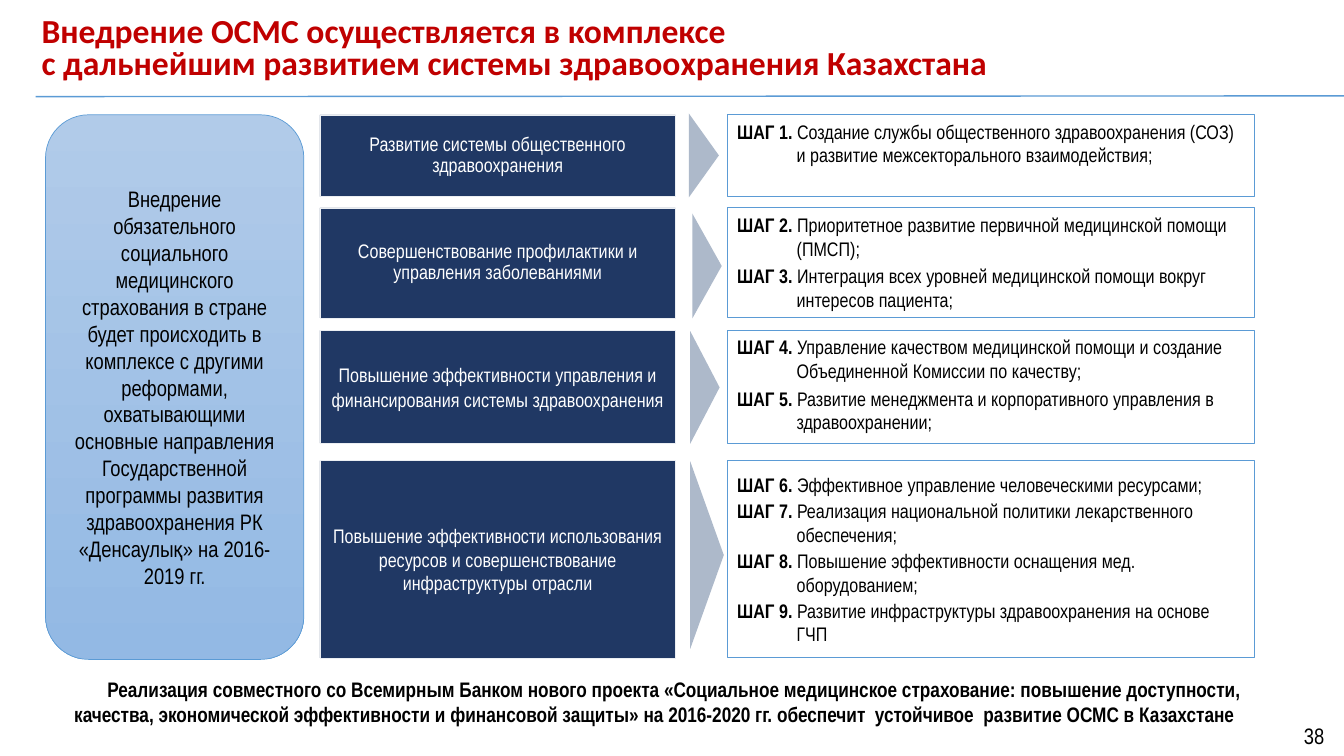
from pptx import Presentation
from pptx.dml.color import RGBColor
from pptx.enum.shapes import MSO_CONNECTOR, MSO_SHAPE as Preset
from pptx.enum.text import MSO_ANCHOR as Anchor, MSO_AUTO_SIZE as AutoSize, PP_ALIGN as Align
from pptx.oxml.ns import qn
from pptx.util import Pt
from lxml import etree

RED = RGBColor(0xC0, 0x00, 0x00)
NAVY = RGBColor(0x20, 0x38, 0x64)
PALE = RGBColor(0xEB, 0xEE, 0xF2)
BLUE = RGBColor(0x5B, 0x9B, 0xD5)
GREY = RGBColor(0xAD, 0xB9, 0xCA)
PANEL_TOP = RGBColor(0xB1, 0xCB, 0xE9)
PANEL_BOTTOM = RGBColor(0x93, 0xB9, 0xE4)
WHITE = RGBColor(0xFF, 0xFF, 0xFF)
BLACK = RGBColor(0x00, 0x00, 0x00)

TITLE = ["Внедрение ОСМС осуществляется в комплексе",
         "с дальнейшим развитием системы здравоохранения Казахстана"]
REFORM = ("Внедрение обязательного социального медицинского страхования в стране будет "
          "происходить в комплексе с другими реформами, охватывающими основные направления "
          "Государственной программы развития здравоохранения РК «Денсаулық» на 2016-2019 гг.")
PROJECT = ("Реализация совместного со Всемирным Банком нового проекта «Социальное медицинское "
           "страхование: повышение доступности, качества, экономической эффективности и "
           "финансовой защиты» на 2016-2020 гг. обеспечит  устойчивое  развитие ОСМС в Казахстане")

# Each row: top, height, arrow box, direction, its line spacing, steps, their format
ROWS = [
    (82, 58.5, (492, 81, 21.5, 60), "Развитие системы общественного здравоохранения", 0.9,
     ["Создание службы общественного здравоохранения (СОЗ) и развитие межсекторального "
      "взаимодействия;"], {"before": 3}),
    (148.5, 78.5, (494.5, 152.5, 21, 75),
     "Совершенствование профилактики и управления заболеваниями", 0.9,
     ["Приоритетное развитие первичной медицинской помощи (ПМСП);",
      "Интеграция всех уровней медицинской помощи вокруг интересов пациента;"], {"before": 3}),
    (236, 80.5, (493, 236.5, 21, 80.5),
     "Повышение эффективности управления и финансирования системы здравоохранения", 1.06,
     ["Управление качеством медицинской помощи и создание Объединенной Комиссии по качеству;",
      "Развитие менеджмента и корпоративного управления в здравоохранении;"], {"before": 3}),
    (329, 141, (493, 329.5, 24, 134),
     "Повышение эффективности использования ресурсов и совершенствование инфраструктуры отрасли",
     1,
     ["Эффективное управление человеческими ресурсами;",
      "Реализация национальной политики лекарственного обеспечения;",
      "Повышение эффективности оснащения мед. оборудованием;",
      "Развитие инфраструктуры здравоохранения на основе ГЧП"],
     {"before": 2, "anchor": Anchor.MIDDLE}),
]


def write(frame, paragraphs, *, size=14, font="Arial Narrow", color=BLACK, bold=False,
          align=Align.LEFT, anchor=Anchor.TOP, spacing=1, before=0, margin=0, indent=0):
    """Fill a frame; a paragraph is a string or a (bold label, plain text) pair."""
    frame.word_wrap = True
    frame.auto_size = AutoSize.NONE
    frame.vertical_anchor = anchor
    for number, content in enumerate(paragraphs):
        paragraph = frame.add_paragraph() if number else frame.paragraphs[0]
        paragraph.alignment = align
        paragraph.line_spacing = spacing
        paragraph.space_before = Pt(before)
        properties = paragraph._p.get_or_add_pPr()
        properties.set("marL", str(Pt(margin)))
        properties.set("indent", str(Pt(indent)))
        pieces = [(content, bold)] if isinstance(content, str) else zip(content, (True, False))
        for words, weight in pieces:
            run = paragraph.add_run()
            run.text = words
            run.font.name, run.font.size, run.font.bold = font, Pt(size), weight
            run.font.color.rgb = color


def add_block(slide, preset, box, fill=None, line=None, line_width=0.75):
    block = slide.shapes.add_shape(preset, *map(Pt, box))
    block.shadow.inherit = False
    if fill is None:
        block.fill.background()
    else:
        block.fill.solid()
        block.fill.fore_color.rgb = fill
    if line is None:
        block.line.fill.background()
    else:
        block.line.color.rgb = line
        block.line.width = Pt(line_width)
    return block


def add_text(slide, box, words, **style):
    write(slide.shapes.add_textbox(*map(Pt, box)).text_frame, [words], **style)


def add_heading(slide, box):
    left, top, width, height = box
    title = slide.shapes.title
    title.left, title.top, title.width, title.height = map(Pt, box)
    write(title.text_frame, TITLE, size=24, font="Calibri", color=RED, bold=True,
          anchor=Anchor.MIDDLE, spacing=0.8)
    rule_y = top + height + 8
    rule = slide.shapes.add_connector(MSO_CONNECTOR.STRAIGHT, Pt(left + 3), Pt(rule_y),
                                      Pt(960), Pt(rule_y - 0.5))
    rule.line.color.rgb = BLUE
    rule.line.width = Pt(1)
    etree.SubElement(rule._element.spPr, qn("a:effectLst"))


def add_reform_panel(slide, box):
    panel = add_block(slide, Preset.ROUNDED_RECTANGLE, box, PANEL_TOP, BLUE, 0.5)
    panel.fill.gradient()
    panel.fill.gradient_angle = 270
    for stop, color in zip(panel.fill.gradient_stops, (PANEL_TOP, PANEL_BOTTOM)):
        stop.color.rgb = color
    write(panel.text_frame, [REFORM], size=16, align=Align.CENTER, anchor=Anchor.MIDDLE)


def add_arrow(slide, box):
    """Place a right-pointing triangle that fills the box once rotated."""
    left, top, width, height = box
    shift = (height - width) / 2
    arrow = add_block(slide, Preset.ISOSCELES_TRIANGLE,
                      (left - shift, top + shift, height, width), GREY)
    arrow.rotation = 90


def add_row(slide, box, arrow_box, direction, spacing, steps, style):
    left, top, width, height = box
    direction_width, steps_left = 254, 291
    direction_block = add_block(slide, Preset.RECTANGLE, (left, top, direction_width, height),
                                NAVY, PALE, 0.25)
    write(direction_block.text_frame, [direction], color=WHITE, spacing=spacing,
          align=Align.CENTER, anchor=Anchor.MIDDLE)
    add_arrow(slide, arrow_box)
    steps_block = add_block(slide, Preset.RECTANGLE,
                            (left + steps_left, top, width - steps_left, height), line=BLUE)
    write(steps_block.text_frame, steps, margin=42.5, indent=-42.5, **style)


def add_rows(slide, left, width):
    step_number = 1
    for top, height, arrow_box, direction, spacing, steps, style in ROWS:
        labelled = [(f"ШАГ {number}. ", step) for number, step in enumerate(steps, step_number)]
        step_number += len(steps)
        add_row(slide, (left, top, width, height), arrow_box, direction, spacing, labelled, style)


def main():
    deck = Presentation()
    deck.slide_width, deck.slide_height = Pt(960), Pt(540)
    slide = deck.slides.add_slide(deck.slide_layouts[5])
    add_heading(slide, (22.5, 10, 773, 51))
    add_reform_panel(slide, (32.5, 82, 184.5, 389))
    add_rows(slide, 228.5, 667.5)
    add_text(slide, (39, 479.5, 857.5, 44), PROJECT, size=15, bold=True,
             align=Align.CENTER, indent=28)
    add_text(slide, (903, 511, 50, 29), "38", size=16, align=Align.RIGHT, anchor=Anchor.MIDDLE)
    deck.save("out.pptx")


if __name__ == "__main__":
    main()
